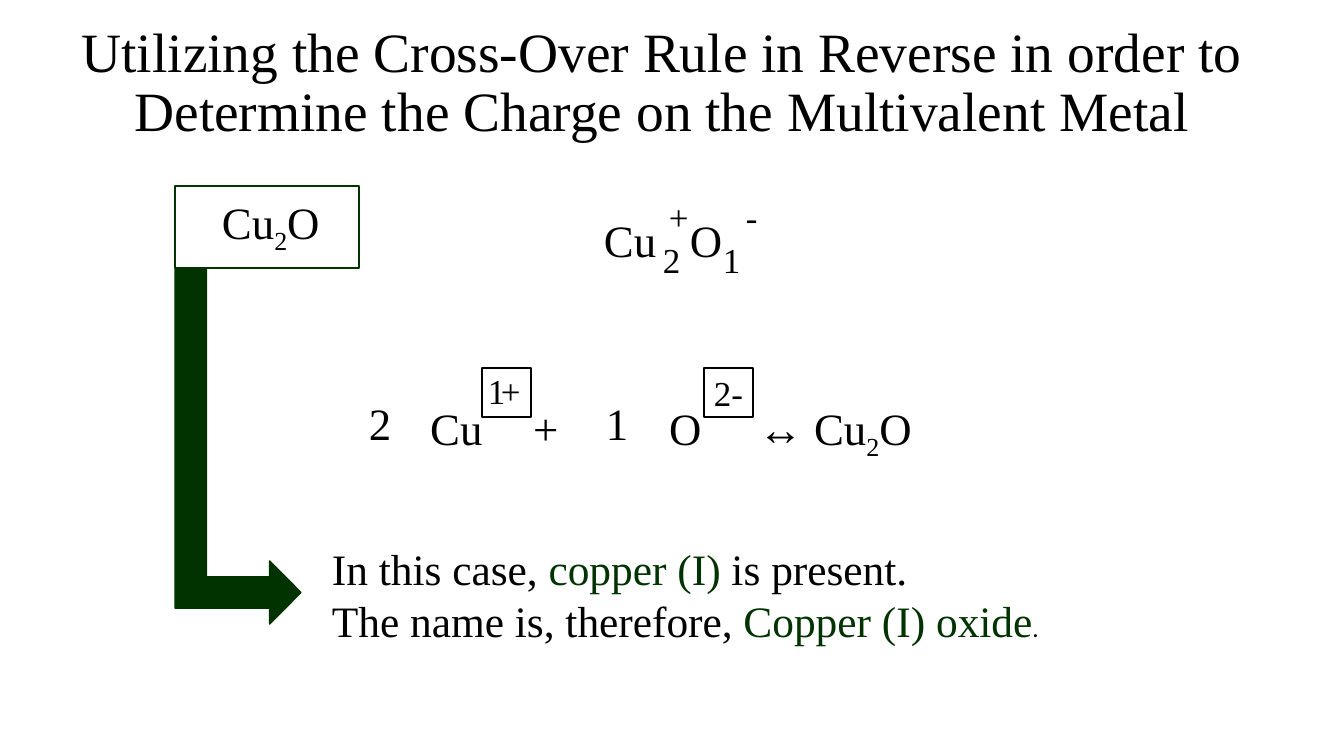
from dataclasses import dataclass

from lxml import etree
from pptx import Presentation
from pptx import util as u
from pptx.dml.color import RGBColor
from pptx.enum import shapes, text
from pptx.oxml.ns import qn

SCALE = 914400 / 100.8


@dataclass(frozen=True)
class Theme:
    """Colours, fonts and type sizes of the slide."""
    ink: str = "000000"
    green: str = "003300"
    paper: str = "FFFFFF"
    face: str = "Times New Roman"
    plain: str = "Calibri"
    title: float = 39.6
    big: int = 32
    body: int = 31
    mark: int = 25
    small: int = 18


T = Theme()


def px(n):
    """Turn pixels into EMU."""
    return u.Emu(round(n * SCALE))


def style(font, size=None, color=None, face=None):
    """Set the given traits of a font."""
    if size:
        font.size = u.Pt(size)
    if color:
        font.color.rgb = RGBColor.from_string(color)
    if face:
        font.name = face


def fill_par(par, runs, size):
    """Write (text, traits) runs into a paragraph of one base size."""
    style(par.font, size, T.ink, T.face)
    for words, traits in runs:
        run = par.add_run()
        run.text = words
        traits = dict(traits)
        if traits.pop("sub", False):
            run._r.get_or_add_rPr().set("baseline", "-25000")
        if traits.pop("line", False):
            run.font.underline = True
        style(run.font, **traits)


def label(slide, x, y, w, h, runs, size):
    """Add a one-line text box and return it."""
    box = slide.shapes.add_textbox(px(x), px(y), px(w), px(h))
    box.text_frame.word_wrap = False
    fill_par(box.text_frame.paragraphs[0], runs, size)
    return box


def shape(slide, kind, x, y, w, h, fill=None, line=T.ink):
    """Add a preset shape with a thin outline."""
    item = slide.shapes.add_shape(kind, px(x), px(y), px(w), px(h))
    item.shadow.inherit = False
    if fill:
        item.fill.solid()
        item.fill.fore_color.rgb = RGBColor.from_string(fill)
    else:
        item.fill.background()
    item.line.color.rgb = RGBColor.from_string(line)
    item.line.width = u.Pt(1)
    return item


def heading(slide, x, y, w, h):
    """Place the slide title."""
    item = slide.shapes.title
    item.left, item.top, item.width, item.height = map(px, (x, y, w, h))
    frame = item.text_frame
    frame.word_wrap = True
    frame.vertical_anchor = text.MSO_ANCHOR.MIDDLE
    par = frame.paragraphs[0]
    par.alignment = text.PP_ALIGN.CENTER
    par.line_spacing = 0.9
    fill_par(par, [("Utilizing the Cross-Over Rule in Reverse in order to "
                    "Determine the Charge on the Multivalent Metal", {})], T.title)


def formula(slide, x, y, w, h):
    """Draw the boxed formula."""
    shape(slide, shapes.MSO_SHAPE.RECTANGLE, x, y, w, h, T.paper, T.green)
    label(slide, x + 37, y + 4, 121, 64,
          [("Cu", {}), ("2", {"sub": True}), ("O", {})], T.big)


def arrow(slide, x, y, w, h):
    """Draw the bent arrow that fills the box once turned."""
    item = shape(slide, shapes.MSO_SHAPE.BENT_UP_ARROW, x + (w - h) / 2,
                 y + (h - w) / 2, h, w, T.green, T.green)
    item.rotation = 90


def ions(slide, x, y):
    """Place the symbols with their charges and subscripts."""
    for words, dx, w in (("Cu", 0, 73), ("O", 86, 53)):
        label(slide, x + dx, y + 17, w, 64, [(words, {})], T.big)
    for words, dx, dy, w in (("2", 59, 43, 38), ("1", 119, 43, 38),
                             ("+", 65, 0, 40), ("-", 142, 0, 32)):
        label(slide, x + dx, y + dy, w, 52, [(words, {})], T.mark)


def balance(slide, x, y, w, h):
    """Write the equation with its blanks and charge boxes."""
    box = slide.shapes.add_textbox(px(x), px(y + 31), px(w), px(h))
    frame = box.text_frame
    frame.word_wrap = True
    frame.margin_left = px(15)
    par = frame.paragraphs[0]
    tabs = etree.SubElement(par._p.get_or_add_pPr(), qn("a:tabLst"))
    for stop in (82, 196, 321, 421):
        etree.SubElement(tabs, qn("a:tab"), pos=str(px(stop)), algn="l")
    fill_par(par, [("\t", {"line": True, "face": T.plain}), (" Cu\t+ ", {}),
                   ("\t", {"line": True}), (" O\t↔ Cu", {}),
                   ("2", {"sub": True}), ("O", {})], T.big)
    for count, dx in (("2", 37), ("1", 274)):
        label(slide, x + dx, y + 26, 43, 64, [(count, {})], T.big)
    for dx in (160, 382):
        shape(slide, shapes.MSO_SHAPE.RECTANGLE, x + dx, y + 3, 49, 49)
    for words, dx, dy, w in (("1", 156, 0, 38), ("+", 169, 0, 40), ("2-", 382, 2, 49)):
        label(slide, x + dx, y + dy, w, 52, [(words, {})], T.mark)


def result(slide, x, y, w, h):
    """State the name of the compound."""
    green = {"color": T.green}
    box = label(slide, x, y, w, h, [("In this case, ", {}), ("copper (I)", green),
                                    (" is present.", {})], T.body)
    fill_par(box.text_frame.add_paragraph(),
             [("The name is, therefore, ", {}), ("Copper (I) oxide", green),
              (".", {"size": T.small, "face": T.plain})], T.body)


def main():
    """Build the slide and save it."""
    deck = Presentation()
    deck.slide_width, deck.slide_height = px(1344), px(756)
    slide = deck.slides.add_slide(deck.slide_layouts[5])
    heading(slide, 14, 18, 1296, 132)
    formula(slide, 175, 186, 184, 82)
    arrow(slide, 175, 268, 126, 356)
    ions(slide, 594, 191)
    balance(slide, 322, 365, 605, 64)
    result(slide, 322, 537, 757, 119)
    deck.save("out.pptx")


if __name__ == "__main__":
    main()
